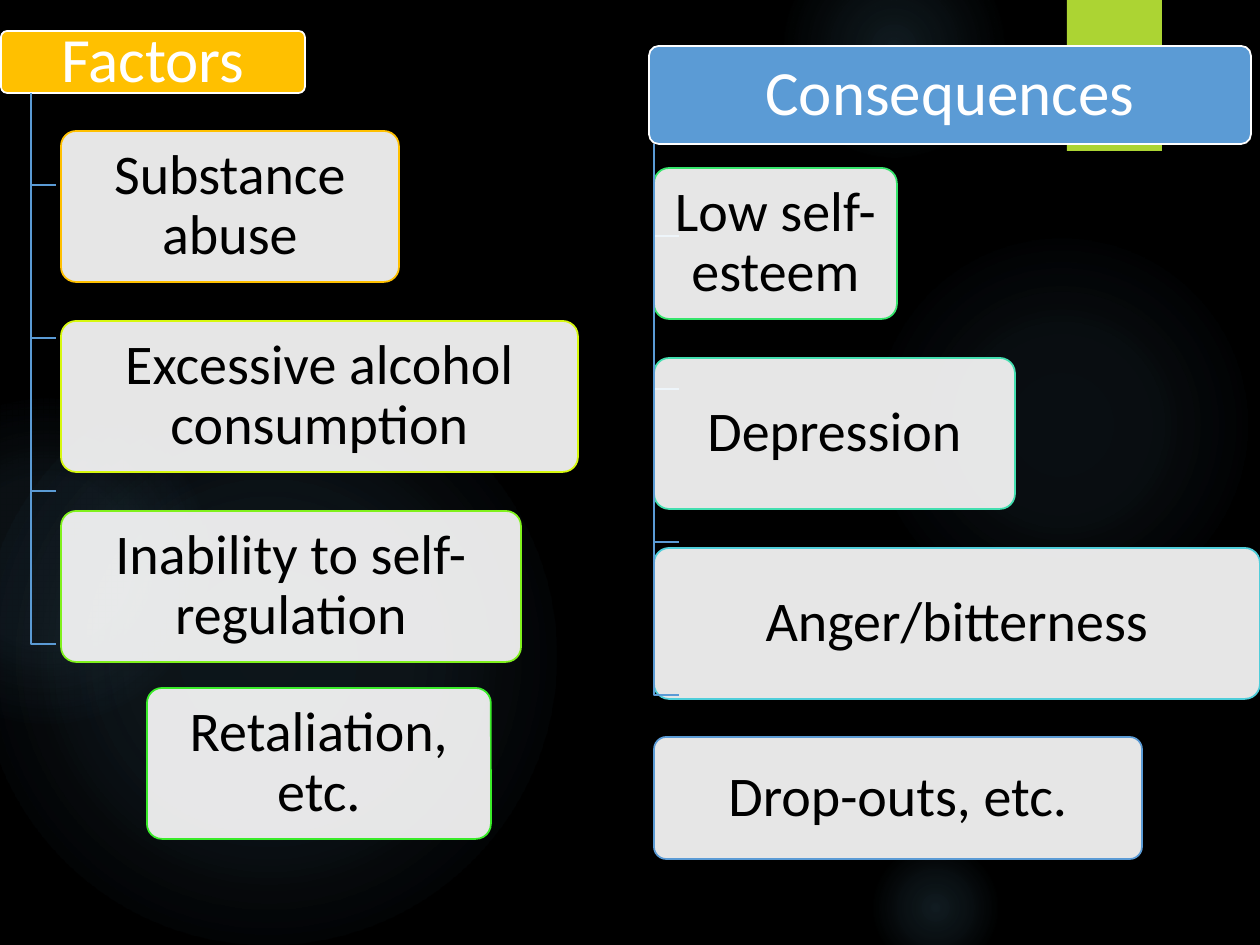
from lxml.etree import SubElement
from pptx import Presentation
from pptx.dml.color import RGBColor
from pptx.enum.shapes import MSO_SHAPE
from pptx.enum.text import MSO_ANCHOR, PP_ALIGN
from pptx.oxml import parse_xml
from pptx.oxml.ns import nsdecls, qn
from pptx.util import Inches, Pt

PX = 7257  # EMU per px, 126 px to the inch
COLORS = {
    "black": "000000", "white": "FFFFFF", "glow": "7AC4F0",
    "tab": "ACD433", "amber": "FFC000", "blue": "5B9BD5",
    "lime": "D7F80E", "grass": "80F11C", "green": "39EB29",
    "mint": "36E56C", "teal": "43DFB0", "aqua": "4FCEDA",
}


def rgb(name):
    return RGBColor.from_string(COLORS[name])


def add_box(box, text, size, fill, line, color):
    sp = s.shapes.add_shape(MSO_SHAPE.ROUNDED_RECTANGLE, *[v * PX for v in box])
    sp.shadow.inherit = False
    sp.adjustments[0] = 0.1
    sp.fill.solid()
    sp.fill.fore_color.rgb = rgb(fill)
    sp.line.color.rgb = rgb(line)
    sp.line.width = Pt(1)
    tf = sp.text_frame
    tf.word_wrap = True
    tf.vertical_anchor = MSO_ANCHOR.MIDDLE
    tf.margin_left = tf.margin_right = 13 * PX
    tf.margin_top = tf.margin_bottom = 9 * PX
    tf.text = text
    p = tf.paragraphs[0]
    p.alignment = PP_ALIGN.CENTER
    p.line_spacing = 0.9
    r = p.runs[0]
    r.font.name = "Calibri"
    r.font.size = Pt(size)
    r.font.color.rgb = rgb(color)
    return sp


prs = Presentation()
prs.slide_width, prs.slide_height = Inches(10), Inches(7.5)
s = prs.slides.add_slide(prs.slide_layouts[6])
s.background.fill.solid()
s.background.fill.fore_color.rgb = rgb("black")

# Background glows: left, top, diameter, (stop %, opacity %) pairs
glows = [
    (868, 231, 388, [(0, 7), (36, 6), (69, 0)]),
    (784, -63, 220, [(0, 14), (36, 7), (73, 0)]),
    (868, 840, 136, [(0, 14), (36, 7), (66, 0)]),
    (-21, 368, 577, [(0, 11), (36, 10), (75, 0)]),
    (-116, 399, 325, [(0, 8), (36, 8), (72, 0)]),
]
for x, y, d, stops in glows:
    sp = s.shapes.add_shape(MSO_SHAPE.OVAL, x * PX, y * PX, d * PX, d * PX)
    sp.shadow.inherit = False
    sp.line.fill.background()
    gs = "".join(
        f'<a:gs pos="{pos * 1000}"><a:srgbClr val="{COLORS["glow"]}">'
        f'<a:alpha val="{alpha * 1000}"/></a:srgbClr></a:gs>'
        for pos, alpha in stops)
    grad = parse_xml(
        f'<a:gradFill {nsdecls("a")} rotWithShape="1"><a:gsLst>{gs}</a:gsLst>'
        '<a:path path="circle"><a:fillToRect l="50000" t="50000" r="50000" b="50000"/>'
        '</a:path></a:gradFill>')
    sp._element.spPr.find(qn("a:prstGeom")).addnext(grad)

tab = s.shapes.add_shape(MSO_SHAPE.RECTANGLE, 1067 * PX, 0, 95 * PX, 151 * PX)
tab.shadow.inherit = False
tab.fill.solid()
tab.fill.fore_color.rgb = rgb("tab")
tab.line.fill.background()

# Each column: heading, its box and fill, stem x, then items (text, box, outline)
columns = [
    ("Factors", (1, 31, 304, 62), "amber", 31, [
        ("Substance abuse", (61, 131, 338, 151), "amber"),
        ("Excessive alcohol consumption", (61, 321, 517, 151), "lime"),
        ("Inability to self-regulation", (61, 511, 460, 151), "grass"),
        ("Retaliation, etc.", (147, 688, 344, 151), "green"),
    ]),
    ("Consequences", (649, 46, 602, 98), "blue", 654, [
        ("Low self-esteem", (654, 168, 243, 151), "mint"),
        ("Depression", (654, 358, 361, 151), "teal"),
        ("Anger/bitterness", (654, 548, 606, 151), "aqua"),
        ("Drop-outs, etc.", (654, 737, 488, 122), "blue"),
    ]),
]
for heading, head_box, fill, stem, items in columns:
    add_box(head_box, heading, 36, fill, "white", "white")
    bottom = head_box[1] + head_box[3]
    for i, (text, box, outline) in enumerate(items):
        tick = bottom + 92 + 153 * i
        fb = s.shapes.build_freeform(stem, bottom, scale=PX)
        fb.add_line_segments([(stem, tick), (stem + 25, tick)], close=False)
        elbow = fb.convert_to_shape()
        elbow.shadow.inherit = False
        elbow.fill.background()
        elbow.line.color.rgb = rgb("blue")
        elbow.line.width = Pt(1)

        sp = add_box(box, text, 32, "white", outline, "black")
        clr = sp._element.spPr.find(qn("a:solidFill")).find(qn("a:srgbClr"))
        SubElement(clr, qn("a:alpha"), val="90000")

prs.save("out.pptx")
